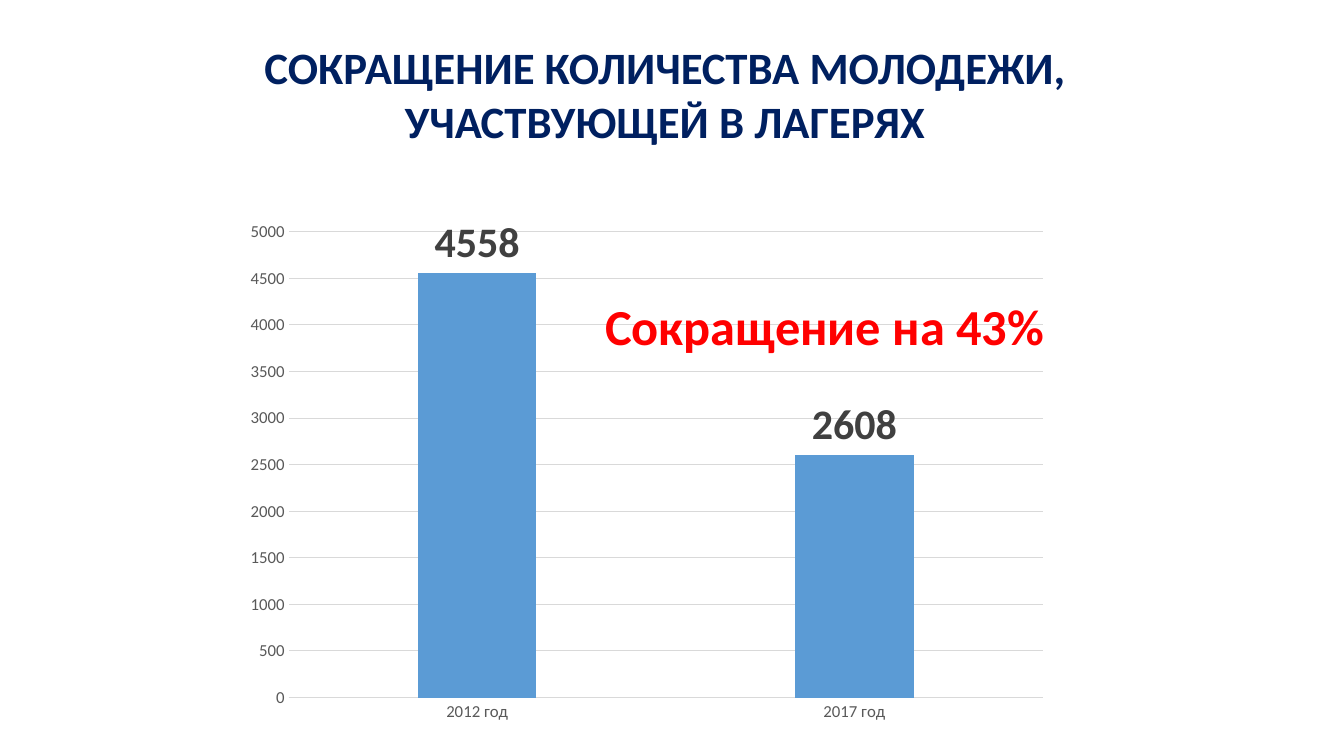
from dataclasses import dataclass

from lxml.etree import SubElement
from pptx import Presentation
from pptx.chart.axis import _BaseAxis
from pptx.chart.chart import Chart
from pptx.chart.data import CategoryChartData
from pptx.dml.color import RGBColor
from pptx.enum.chart import XL_CHART_TYPE, XL_LABEL_POSITION, XL_TICK_MARK
from pptx.enum.text import MSO_ANCHOR, MSO_AUTO_SIZE, PP_ALIGN
from pptx.oxml.ns import qn
from pptx.shapes.autoshape import Shape
from pptx.slide import Slide
from pptx.text.text import Font
from pptx.util import Emu, Pt

SCALE = 9525
FACE = "Calibri"
NAVY = RGBColor(0x00, 0x20, 0x60)
RED = RGBColor(0xFF, 0x00, 0x00)
BLUE = RGBColor(0x5B, 0x9B, 0xD5)
DARK = RGBColor(0x40, 0x40, 0x40)
GRAY = RGBColor(0x59, 0x59, 0x59)
PALE = RGBColor(0xD9, 0xD9, 0xD9)


def px(size: int) -> Emu:
    return Emu(size * SCALE)


@dataclass(frozen=True)
class Box:
    left: int
    top: int
    width: int
    height: int

    def emu(self) -> tuple[Emu, Emu, Emu, Emu]:
        return px(self.left), px(self.top), px(self.width), px(self.height)


@dataclass(frozen=True)
class Label:
    text: str
    box: Box
    size: int
    color: RGBColor
    align: PP_ALIGN


TITLE = Label("СОКРАЩЕНИЕ КОЛИЧЕСТВА МОЛОДЕЖИ, УЧАСТВУЮЩЕЙ В ЛАГЕРЯХ",
              Box(174, 33, 919, 142), 32, NAVY, PP_ALIGN.CENTER)
NOTE = Label("Сокращение на 43%", Box(567, 276, 513, 68), 36, RED, PP_ALIGN.LEFT)
GRAPH = Box(228, 201, 781, 493)
CAMPS = {"2012 год": 4558, "2017 год": 2608}
PLOT = {"x": 0.06, "y": 0.04, "w": 0.92, "h": 0.9}


def style(font: Font, size: int, color: RGBColor, bold: bool = False) -> None:
    font.name = FACE
    font.size = Pt(size)
    font.bold = bold
    font.color.rgb = color


def write(shape: Shape, label: Label) -> None:
    shape.left, shape.top, shape.width, shape.height = label.box.emu()
    frame = shape.text_frame
    frame.word_wrap = True
    frame.auto_size = MSO_AUTO_SIZE.NONE
    frame.vertical_anchor = MSO_ANCHOR.TOP
    para = frame.paragraphs[0]
    para.alignment = label.align
    run = para.add_run()
    run.text = label.text
    style(run.font, label.size, label.color, True)


def dress(axis: _BaseAxis) -> None:
    axis.major_tick_mark = XL_TICK_MARK.NONE
    axis.minor_tick_mark = XL_TICK_MARK.NONE
    style(axis.tick_labels.font, 12, GRAY)


def place(chart: Chart) -> None:
    area = chart._chartSpace.chart.plotArea
    old = area.find(qn("c:layout"))
    if old is not None:
        area.remove(old)
    layout = area.makeelement(qn("c:layout"))
    area.insert(0, layout)
    manual = SubElement(layout, qn("c:manualLayout"))
    parts = {"layoutTarget": "inner", "xMode": "edge", "yMode": "edge", **PLOT}
    for name, value in parts.items():
        SubElement(manual, qn(f"c:{name}")).set("val", str(value))


def draw(slide: Slide) -> None:
    data = CategoryChartData()
    data.categories = list(CAMPS)
    data.add_series("Series 1", list(CAMPS.values()))
    frame = slide.shapes.add_chart(XL_CHART_TYPE.COLUMN_CLUSTERED, *GRAPH.emu(), data)
    chart = frame.chart
    chart.has_legend = False
    chart.has_title = False
    chart.font.name = FACE
    chart.font.size = Pt(10)
    place(chart)

    years = chart.category_axis
    dress(years)
    years.format.line.color.rgb = PALE
    years.format.line.width = Pt(0.75)

    count = chart.value_axis
    dress(count)
    count.minimum_scale = 0
    count.maximum_scale = 5000
    count.major_unit = 500
    count.format.line.fill.background()
    grid = count.major_gridlines.format.line
    grid.color.rgb = PALE
    grid.width = Pt(0.75)

    plot = chart.plots[0]
    plot.vary_by_categories = False
    plot.gap_width = 219
    plot.overlap = -27
    bars = plot.series[0]
    bars.format.fill.solid()
    bars.format.fill.fore_color.rgb = BLUE
    labels = bars.data_labels
    labels.show_value = True
    labels.position = XL_LABEL_POSITION.OUTSIDE_END
    style(labels.font, 30, DARK, True)


def main() -> None:
    deck = Presentation()
    deck.slide_width, deck.slide_height = px(1280), px(720)
    slide = deck.slides.add_slide(deck.slide_layouts[5])
    draw(slide)
    write(slide.shapes.add_textbox(*NOTE.box.emu()), NOTE)
    write(slide.shapes.title, TITLE)
    deck.save("out.pptx")


if __name__ == "__main__":
    main()
